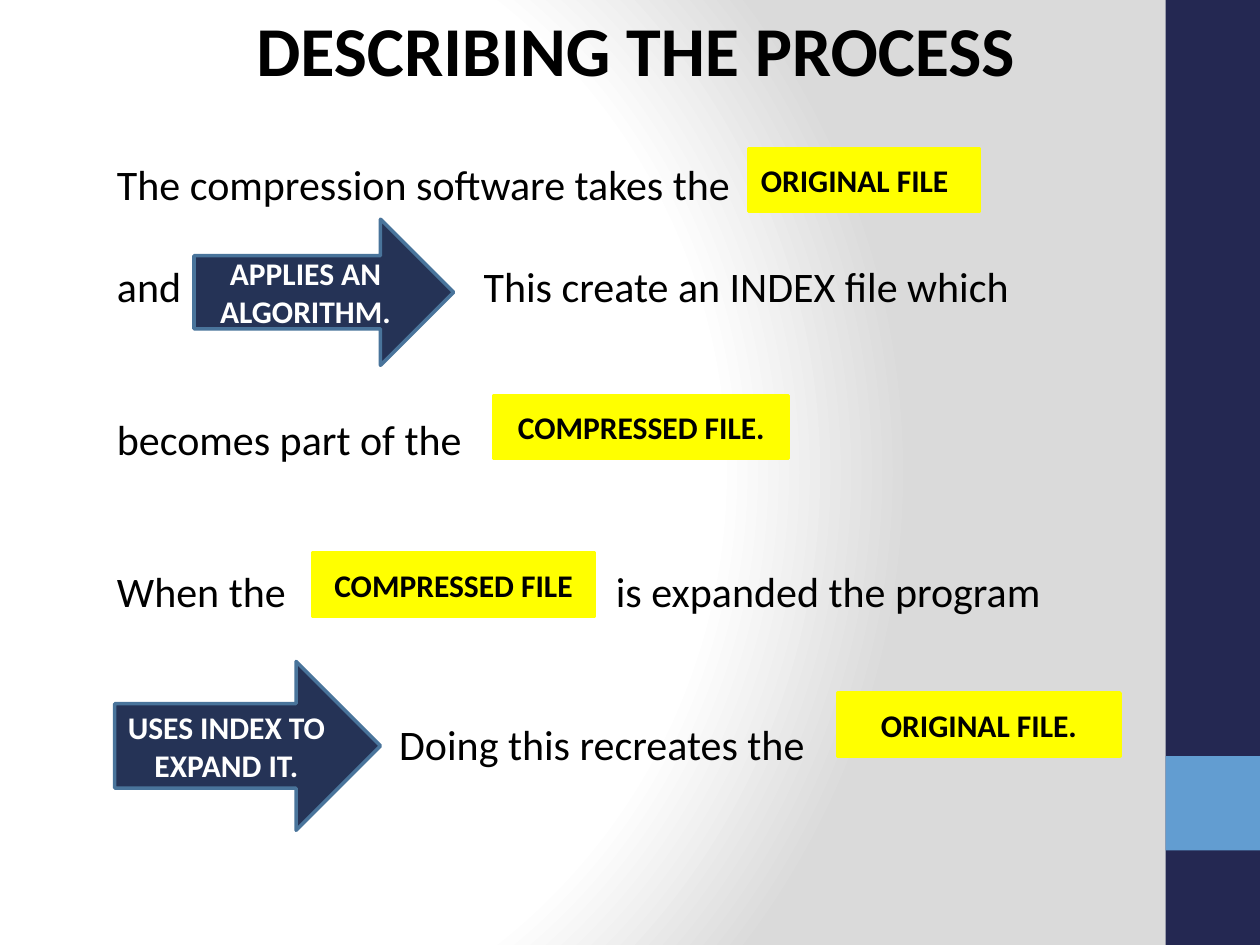
from pptx import Presentation
from pptx.dml.color import RGBColor
from pptx.enum.shapes import MSO_SHAPE
from pptx.enum.text import MSO_ANCHOR, PP_ALIGN
from pptx.oxml import parse_xml
from pptx.oxml.ns import nsdecls
from pptx.util import Inches, Pt

RECTANGLE, ARROW = MSO_SHAPE.RECTANGLE, MSO_SHAPE.RIGHT_ARROW
LEFT, CENTER = PP_ALIGN.LEFT, PP_ALIGN.CENTER
MIDDLE = MSO_ANCHOR.MIDDLE

FONT = "Calibri"
WIDTH, HEIGHT = 10, 7.5
COLORS = {
    "white": "FFFFFF", "grey": "DADADA", "black": "000000",
    "navy": "242852", "sky": "629DD1",
    "arrow": "253356", "arrow_edge": "49749B", "yellow": "FFFF00",
}
LINE = 29.3  # height in points of one line of 24 pt body text

# Text, space before in points, tab stop in inches
SENTENCES = [
    ("The compression software takes the", 39, None),
    ("and\tThis create an INDEX file which", LINE, 2.91),
    ("becomes part of the", 2 * LINE, None),
    ("When the\tis expanded the program", 2 * LINE, 3.96),
    ("\tDoing this recreates the", 2 * LINE, 2.24),
]
ARROWS = [
    ("APPLIES AN ALGORITHM.", 1.54, 1.74, 2.06, 1.16),
    ("USES INDEX TO EXPAND IT.", 0.91, 5.25, 2.11, 1.34),
]
FILES = [
    ("ORIGINAL FILE", 5.94, 1.18, 1.83, LEFT),
    ("ORIGINAL FILE.", 6.65, 5.5, 2.24, CENTER),
    ("COMPRESSED FILE.", 3.92, 3.14, 2.34, CENTER),
    ("COMPRESSED FILE", 2.48, 4.39, 2.24, CENTER),
]


def color(name):
    return RGBColor.from_string(COLORS[name])


def set_background(page):
    """Give the page a circular gradient, which needs XML."""
    stops = "".join(
        f'<a:gs pos="{share * 1000}"><a:srgbClr val="{COLORS[name]}"/></a:gs>'
        for share, name in [(0, "white"), (75, "white"), (100, "grey")])
    page.element.cSld.insert(0, parse_xml(
        f'<p:bg {nsdecls("p", "a")}><p:bgPr><a:gradFill rotWithShape="1">'
        f'<a:gsLst>{stops}</a:gsLst><a:path path="circle">'
        '<a:fillToRect l="20000" t="50000" r="100000" b="50000"/></a:path>'
        '</a:gradFill><a:effectLst/></p:bgPr></p:bg>'))


def format_para(para, size, ink, bold, align=LEFT):
    para.alignment = align
    for span in para.runs:
        span.font.name = FONT
        span.font.size = Pt(size)
        span.font.bold = bold
        span.font.color.rgb = color(ink)


def add_block(page, kind, place, fill, edge=None):
    shape = page.shapes.add_shape(kind, *map(Inches, place))
    shape.shadow.inherit = False
    shape.fill.solid()
    shape.fill.fore_color.rgb = color(fill)
    if edge:
        shape.line.color.rgb = color(edge)
        shape.line.width = Pt(2)
    else:
        shape.line.fill.background()
    return shape


def add_label(shape, text, ink, align=CENTER):
    frame = shape.text_frame
    frame.word_wrap = True
    frame.vertical_anchor = MIDDLE
    frame.text = text
    format_para(frame.paragraphs[0], 18, ink, True, align)


def add_tab_stop(para, inches):
    para._p.get_or_add_pPr().append(parse_xml(
        f'<a:tabLst {nsdecls("a")}>'
        f'<a:tab pos="{Inches(inches)}" algn="l"/></a:tabLst>'))


def add_process_text(page):
    box = page.shapes.add_textbox(
        Inches(0.83), 0, Inches(8.43), Inches(6.7))
    frame = box.text_frame
    frame.word_wrap = True
    frame.text = "DESCRIBING THE PROCESS"
    format_para(frame.paragraphs[0], 40, "black", True, CENTER)
    for text, gap, tab in SENTENCES:
        para = frame.add_paragraph()
        para.text = text
        para.space_before = Pt(gap)
        format_para(para, 24, "black", False)
        if tab:
            add_tab_stop(para, tab)


def main():
    deck = Presentation()
    deck.slide_width, deck.slide_height = Inches(WIDTH), Inches(HEIGHT)
    page = deck.slides.add_slide(deck.slide_layouts[6])
    set_background(page)

    band = 0.1 * HEIGHT
    add_block(page, RECTANGLE, (WIDTH - band, 0, band, HEIGHT), "navy")
    add_block(page, RECTANGLE, (WIDTH - band, 0.8 * HEIGHT, band, band), "sky")
    add_process_text(page)
    for text, *place in ARROWS:
        arrow = add_block(page, ARROW, place, "arrow", "arrow_edge")
        add_label(arrow, text, "white")
    for text, left, top, width, align in FILES:
        place = (left, top, width, 0.5)
        file_box = add_block(page, RECTANGLE, place, "yellow", "yellow")
        add_label(file_box, text, "black", align)
    deck.save("out.pptx")


if __name__ == "__main__":
    main()
